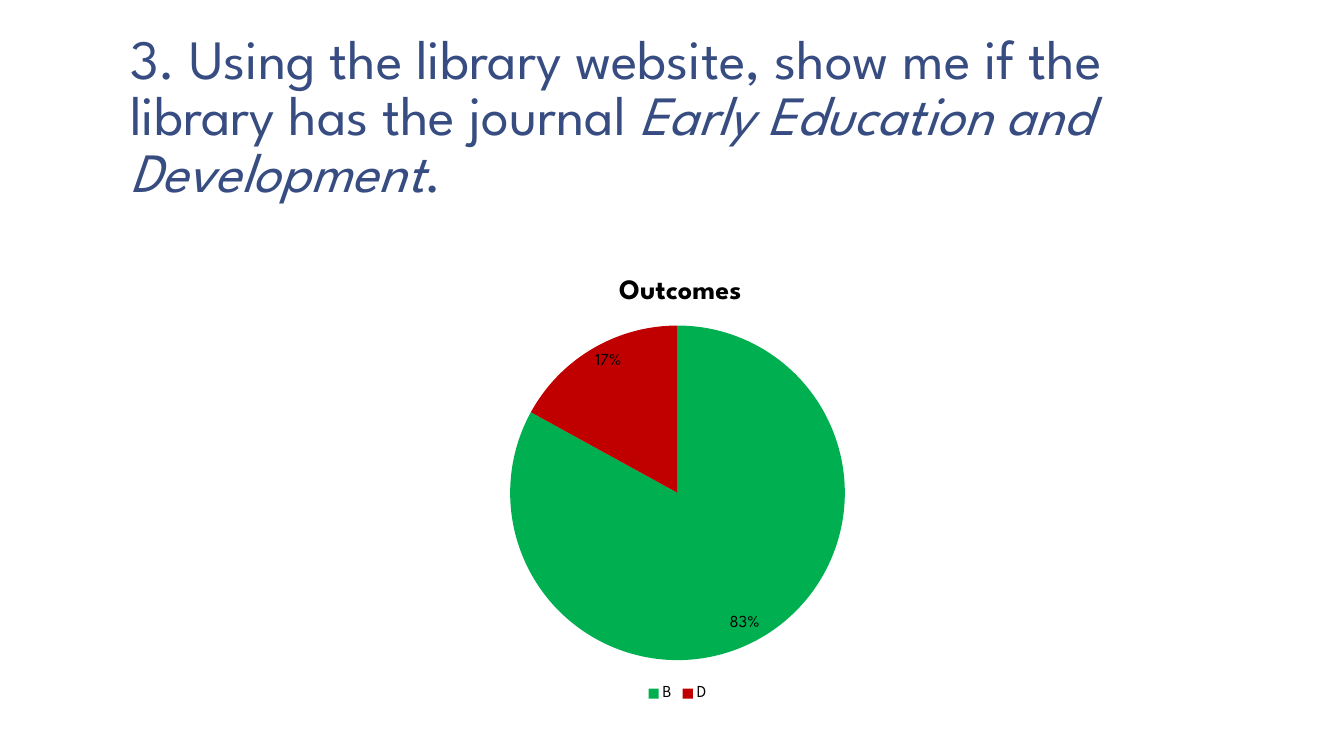
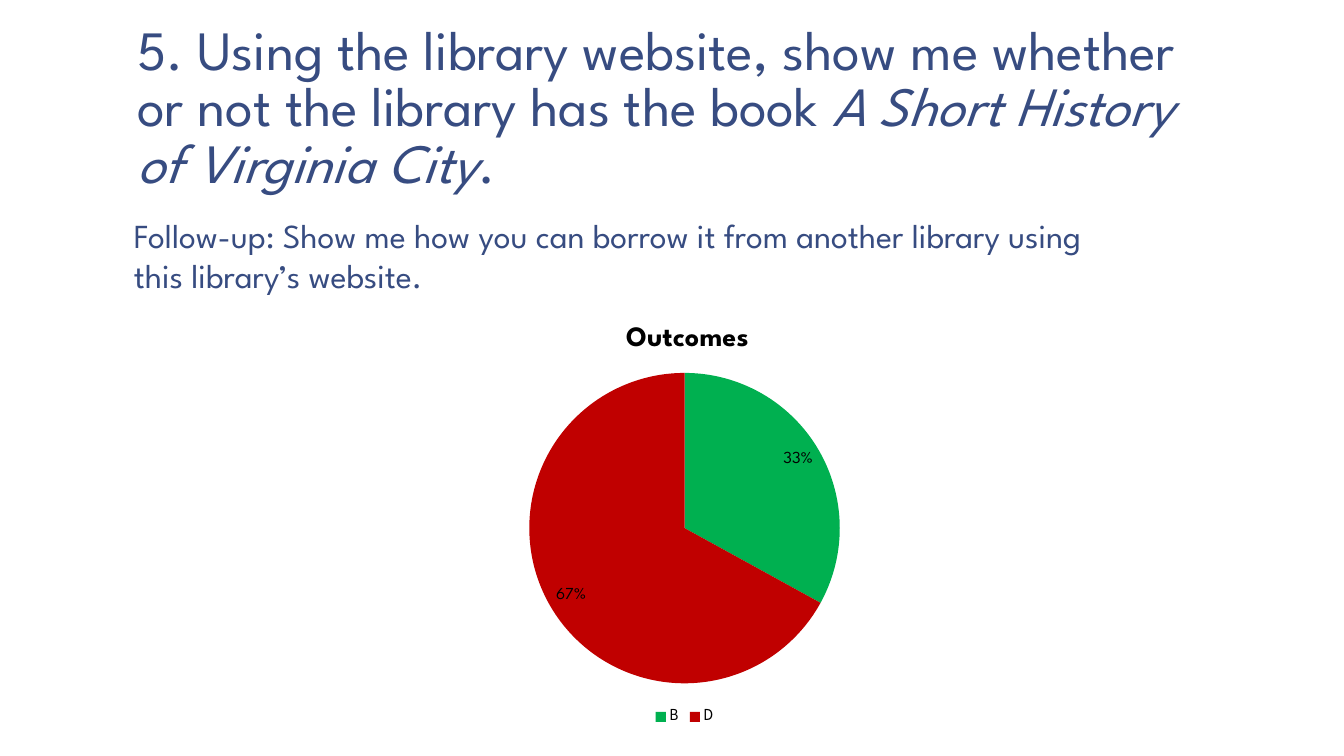
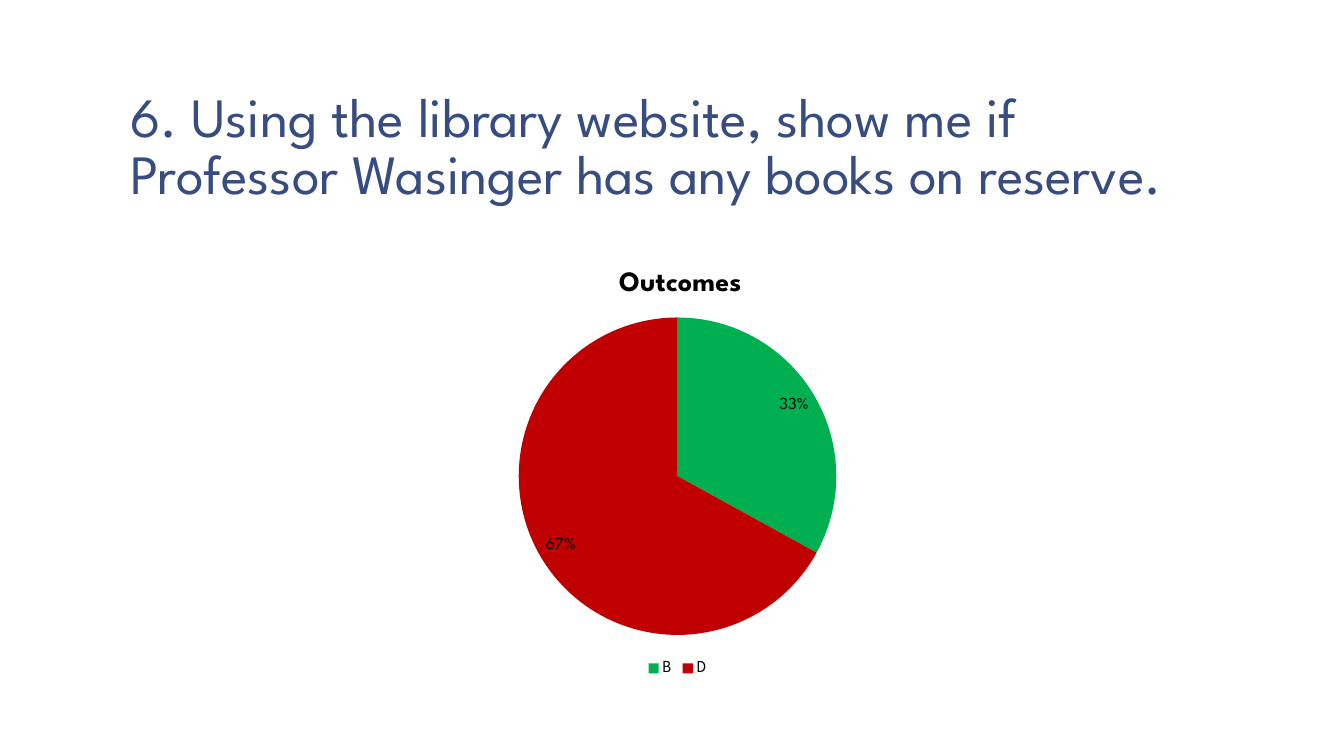
from dataclasses import dataclass

from lxml.etree import SubElement
from pptx import Presentation
from pptx.chart.data import CategoryChartData
from pptx.dml.color import RGBColor
from pptx.enum.chart import XL_CHART_TYPE as ChartType
from pptx.enum.chart import XL_LABEL_POSITION as LabelPosition
from pptx.enum.chart import XL_LEGEND_POSITION as LegendPosition
from pptx.enum.text import MSO_ANCHOR as Anchor
from pptx.enum.text import MSO_AUTO_SIZE as AutoSize
from pptx.enum.text import PP_ALIGN as Align
from pptx.oxml.ns import qn
from pptx.util import Inches, Pt


@dataclass(frozen=True)
class Theme:
    face: str = "League Spartan"
    navy: RGBColor = RGBColor(0x37, 0x4C, 0x81)
    black: RGBColor = RGBColor(0, 0, 0)
    white: RGBColor = RGBColor(255, 255, 255)
    slices: tuple = (RGBColor(0x00, 0xB0, 0x50), RGBColor(0xC0, 0x00, 0x00))
    title: float = 39.6
    follow_up: float = 24
    chart_title: float = 20
    chart_text: float = 12


THEME = Theme()

# Each question: title runs (text, italic), title place, follow-up lines,
# chart place and percentages for outcomes B and D
QUESTIONS = [
    ([("3. Using the library website, show me if the library has the journal ", False),
      ("Early Education and Development", True), (".", False)],
     (1.16, 0.56), [], (3.79, 2.5, 5.86, 4.5), (83, 17)),
    ([("5. Using the library website, show me whether or not the library has the book ", False),
      ("A Short History of Virginia City", True), (".", False)],
     (1.23, 0.47),
     ["Follow-up: Show me how you can borrow it from another library using",
      "this library’s website."],
     (3.69, 2.97, 6.2, 4.26), (33, 67)),
    ([("6. Using the library website, show me if Professor Wasinger has any books on reserve.",
       False)],
     (1.16, 0.58), [], (3.79, 2.42, 5.86, 4.33), (33, 67)),
]


def style(font, size, color, bold=False, italic=False):
    font.name = THEME.face
    font.size = Pt(size)
    font.color.rgb = color
    font.bold = bold
    font.italic = italic


def set_layout(parent, index, settings):
    """Give a chart part a manual layout, as fractions of the chart."""
    for old in parent.findall(qn("c:layout")):
        parent.remove(old)
    layout = SubElement(parent, qn("c:layout"))
    parent.insert(index, layout)
    manual = SubElement(layout, qn("c:manualLayout"))
    for tag, value in settings.items():
        SubElement(manual, qn(f"c:{tag}")).set("val", str(value))


deck = Presentation()
deck.slide_width, deck.slide_height = Inches(13.33), Inches(7.5)
background = deck.slide_master.background.fill
background.solid()
background.fore_color.rgb = THEME.white
title_only = deck.slide_layouts.get_by_name("Title Only")

for title_runs, (title_left, title_top), follow_up, place, shares in QUESTIONS:
    slide = deck.slides.add_slide(title_only)

    # Question title
    title = slide.shapes.title
    title.left, title.top = Inches(title_left), Inches(title_top)
    title.width, title.height = Inches(11.11), Inches(1.53)
    frame = title.text_frame
    frame.auto_size = AutoSize.NONE
    frame.word_wrap = True
    frame.vertical_anchor = Anchor.BOTTOM
    frame.margin_left = frame.margin_right = Inches(0.13)
    frame.margin_top = frame.margin_bottom = Inches(0.07)
    para = frame.paragraphs[0]
    para.alignment = Align.LEFT
    para.line_spacing = 0.85
    for text, italic in title_runs:
        span = para.add_run()
        span.text = text
        style(span.font, THEME.title, THEME.navy, italic=italic)

    # Follow-up task
    if follow_up:
        box = slide.shapes.add_textbox(Inches(1.23), Inches(2.08), Inches(11.44), Inches(0.91))
        frame = box.text_frame
        frame.word_wrap = True
        for number, line in enumerate(follow_up):
            para = frame.add_paragraph() if number else frame.paragraphs[0]
            span = para.add_run()
            span.text = line
            style(span.font, THEME.follow_up, THEME.navy)

    # Outcomes pie
    data = CategoryChartData(number_format="0")
    data.categories = ["B", "D"]
    data.add_series("Series 1", shares)
    chart = slide.shapes.add_chart(ChartType.PIE, *map(Inches, place), data).chart
    style(chart.font, THEME.chart_text, THEME.black)

    chart.has_title = True
    span = chart.chart_title.text_frame.paragraphs[0].add_run()
    span.text = "Outcomes"
    style(span.font, THEME.chart_title, THEME.black, bold=True)

    chart.has_legend = True
    chart.legend.position = LegendPosition.BOTTOM
    chart.legend.include_in_layout = False
    style(chart.legend.font, THEME.chart_text, THEME.black)

    pie = chart.plots[0]
    pie.vary_by_categories = True
    for number, color in enumerate(THEME.slices):
        fill = pie.series[0].points[number].format.fill
        fill.solid()
        fill.fore_color.rgb = color
    pie.has_data_labels = True
    labels = pie.data_labels
    labels.show_percentage = True
    labels.show_value = False
    labels.number_format = "0%"
    labels.number_format_is_linked = False
    labels.position = LabelPosition.INSIDE_END
    style(labels.font, THEME.chart_text, THEME.black)

    # Fixed bands above and below the pie hold the title and the legend
    width, height = place[2:]
    diameter = height - 1.18
    set_layout(chart.chart_title._element, 1, {
        "xMode": "edge", "yMode": "edge",
        "x": round(0.5 - 0.63 / width, 4), "y": round(0.19 / height, 4)})
    set_layout(pie._element.getparent(), 0, {
        "layoutTarget": "inner", "xMode": "edge", "yMode": "edge",
        "x": round((1 - diameter / width) / 2, 4), "y": round(0.73 / height, 4),
        "w": round(diameter / width, 4), "h": round(diameter / height, 4)})

deck.save("out.pptx")
